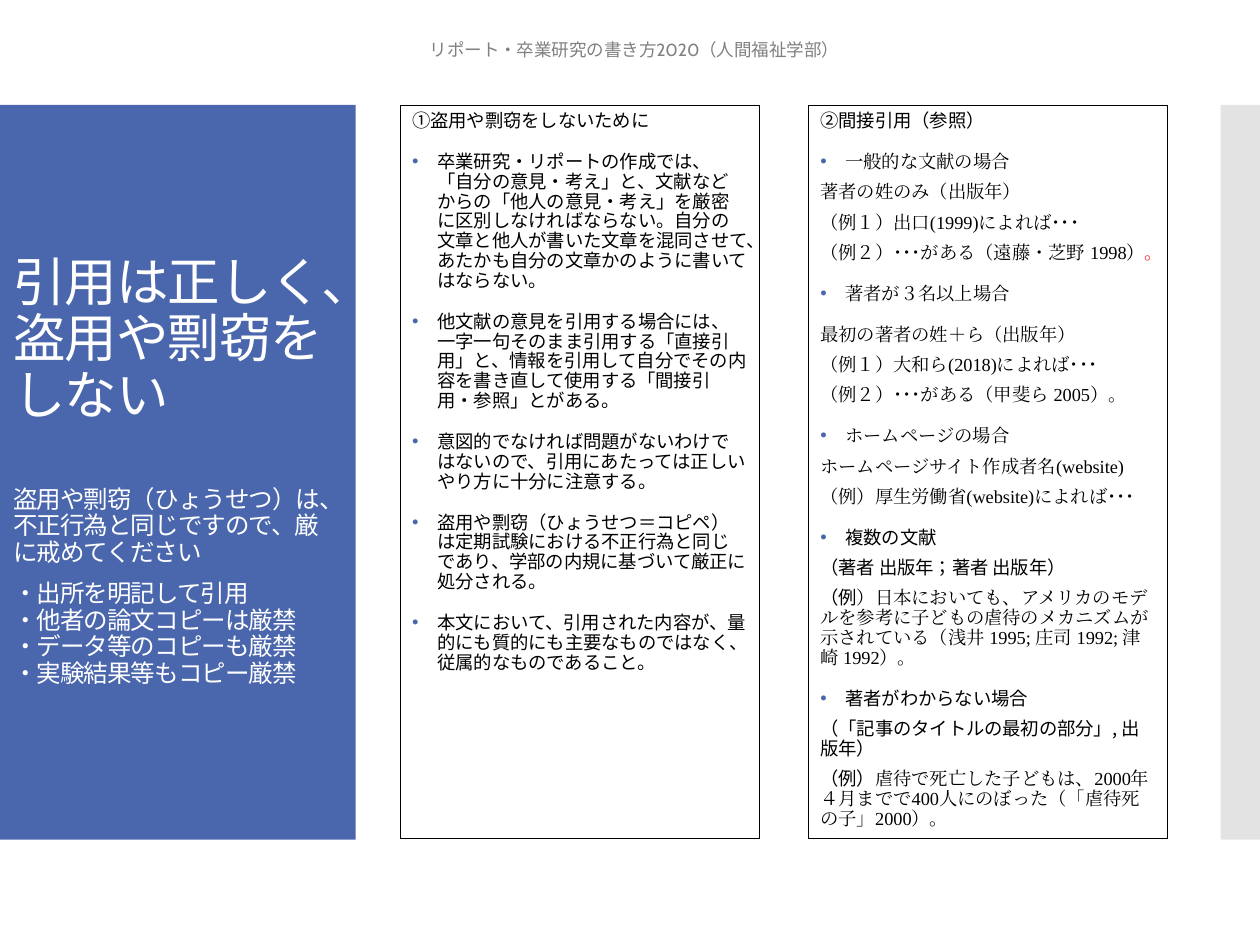
from dataclasses import dataclass

from lxml import etree
from pptx import Presentation
from pptx.dml.color import RGBColor
from pptx.enum import shapes, text
from pptx.oxml import ns
from pptx.util import Pt

BLUE = RGBColor(0x4A, 0x66, 0xAC)
GREY = RGBColor(0xC8, 0xC8, 0xC8)
HEADER_GREY = RGBColor(0x80, 0x80, 0x80)
BLACK = RGBColor(0, 0, 0)
WHITE = RGBColor(0xFF, 0xFF, 0xFF)
RED = RGBColor(0xFF, 0, 0)

CABIN, NOTO, TIMES = "Cabin", "Noto Sans CJK JP", "Times New Roman"

BAND_TOP, BAND_H = 60, 419.8
PANEL_TOP, PANEL_W, PANEL_H = 60.3, 205.5, 419
PANEL_LEFTS = (228.5, 461.7)
BULLET_INDENT = 14.4


@dataclass
class Run:
    text: str
    font: str = TIMES
    color: RGBColor = BLACK
    size: float = 10.5
    spacing: float = 0


@dataclass
class Para:
    runs: list[Run]
    before: float = 6
    hang: float = 0
    bullet: bool = False
    line: float = 0.9
    align: text.PP_ALIGN = text.PP_ALIGN.LEFT


def bullet(txt: str, font: str = TIMES, before: float = 12) -> Para:
    return Para([Run(txt, font)], before, BULLET_INDENT, True)


def plain(txt: str, font: str = TIMES, before: float = 6, hang: float = 0) -> Para:
    return Para([Run(txt, font)], before, hang)


def side(txt: str, size: float, before: float = 0) -> Para:
    return Para([Run(txt, CABIN, WHITE, size, -0.6)], before)


def add_run(p, run: Run) -> None:
    r = p.add_run()
    r.text = run.text
    f = r.font
    f.name, f.size = run.font, Pt(run.size)
    f.color.rgb = run.color
    rPr = f._element
    rPr.set("lang", "ja-JP")
    if run.spacing:
        rPr.set("spc", str(round(run.spacing * 100)))
    latin = rPr.find(ns.qn("a:latin"))
    ea = etree.Element(ns.qn("a:ea"), typeface=run.font)
    latin.addnext(ea)


def write(tf, paras: list[Para], anchor: text.MSO_ANCHOR) -> None:
    tf.word_wrap = True
    tf.vertical_anchor = anchor
    for i, para in enumerate(paras):
        p = tf.add_paragraph() if i else tf.paragraphs[0]
        p.alignment = para.align
        p.line_spacing = para.line
        p.space_before = Pt(para.before)
        pPr = p._p.get_or_add_pPr()
        if para.hang:
            pPr.set("marL", str(Pt(para.hang)))
            pPr.set("indent", str(-Pt(para.hang)))
        if para.bullet:
            color = etree.SubElement(pPr, ns.qn("a:buClr"))
            etree.SubElement(color, ns.qn("a:srgbClr"), val=str(BLUE))
            etree.SubElement(pPr, ns.qn("a:buFont"), typeface="Arial")
            etree.SubElement(pPr, ns.qn("a:buChar"), char="•")
        for run in para.runs:
            add_run(p, run)


def add_rect(s, x: float, y: float, w: float, h: float):
    """Add a rectangle without shadow, fill or line."""
    sp = s.shapes.add_shape(shapes.MSO_SHAPE.RECTANGLE, Pt(x), Pt(y), Pt(w), Pt(h))
    sp.shadow.inherit = False
    sp.fill.background()
    sp.line.fill.background()
    return sp


def add_band(s, x: float, w: float, color: RGBColor, alpha: int = 100) -> None:
    sp = add_rect(s, x, BAND_TOP, w, BAND_H)
    sp.fill.solid()
    sp.fill.fore_color.rgb = color
    if alpha < 100:
        clr = sp._element.spPr.find(ns.qn("a:solidFill")).find(ns.qn("a:srgbClr"))
        etree.SubElement(clr, ns.qn("a:alpha"), val=str(alpha * 1000))


def add_panel(s, x: float, paras: list[Para]) -> None:
    sp = add_rect(s, x, PANEL_TOP, PANEL_W, PANEL_H)
    sp.line.color.rgb = BLACK
    sp.line.width = Pt(0.25)
    write(sp.text_frame, paras, text.MSO_ANCHOR.TOP)


def add_text(s, x: float, y: float, w: float, h: float, paras: list[Para]) -> None:
    tb = s.shapes.add_textbox(Pt(x), Pt(y), Pt(w), Pt(h))
    write(tb.text_frame, paras, text.MSO_ANCHOR.MIDDLE)


MESSAGE = [
    side("引用は正しく、盗用や剽窃をしない", 30),
    side("盗用や剽窃（ひょうせつ）は、不正行為と同じですので、厳に戒めてください", 14, 35),
    side("・出所を明記して引用", 14, 8.5),
    side("・他者の論文コピーは厳禁", 14),
    side("・データ等のコピーも厳禁", 14),
    side("・実験結果等もコピー厳禁", 14),
]

PLAGIARISM = [plain("①盗用や剽窃をしないために", NOTO, 12)] + [
    bullet(txt, NOTO) for txt in (
        "卒業研究・リポートの作成では、「自分の意見・考え」と、文献などからの「他人の意見・考え」を"
        "厳密に区別しなければならない。自分の文章と他人が書いた文章を混同させて、"
        "あたかも自分の文章かのように書いてはならない。",
        "他文献の意見を引用する場合には、一字一句そのまま引用する「直接引用」と、"
        "情報を引用して自分でその内容を書き直して使用する「間接引用・参照」とがある。",
        "意図的でなければ問題がないわけではないので、引用にあたっては正しいやり方に十分に注意する。",
        "盗用や剽窃（ひょうせつ＝コピペ）は定期試験における不正行為と同じであり、"
        "学部の内規に基づいて厳正に処分される。",
        "本文において、引用された内容が、量的にも質的にも主要なものではなく、従属的なものであること。",
    )
]

INDIRECT = [
    plain("②間接引用（参照）", NOTO, 12),
    bullet("一般的な文献の場合"),
    plain("著者の姓のみ（出版年）"),
    plain("（例１）出口(1999)によれば･･･"),
    Para([Run("（例２）･･･がある（遠藤・芝野 1998）"), Run("。", color=RED)], hang=42.5),
    bullet("著者が３名以上場合"),
    plain("最初の著者の姓＋ら（出版年）", before=12),
    plain("（例１）大和ら(2018)によれば･･･"),
    plain("（例２）･･･がある（甲斐ら 2005）。", hang=42.5),
    bullet("ホームページの場合"),
    plain("ホームページサイト作成者名(website)"),
    plain("（例）厚生労働省(website)によれば･･･", hang=28),
    bullet("複数の文献", NOTO),
    plain("（著者 出版年；著者 出版年）", NOTO),
    Para([Run("（例", NOTO),
          Run("）日本においても、アメリカのモデルを参考に子どもの虐待のメカニズムが示されている"
              "（浅井 1995; 庄司 1992; 津崎 1992）。")]),
    bullet("著者がわからない場合", NOTO),
    plain("（「記事のタイトルの最初の部分」, 出版年）", NOTO),
    Para([Run("（例）", NOTO),
          Run("虐待で死亡した子どもは、2000年４月までで400人にのぼった（「虐待死の子」2000）。")]),
]

HEADER = [Para([Run("リポート・卒業研究の書き方2020（人間福祉学部）", CABIN, HEADER_GREY, 10)],
               before=0, line=1.0, align=text.PP_ALIGN.CENTER)]


def main() -> None:
    prs = Presentation()
    prs.slide_width, prs.slide_height = Pt(720), Pt(540)
    s = prs.slides.add_slide(prs.slide_layouts[6])
    add_band(s, 0, 203.3, BLUE)
    add_band(s, 697.5, 22.5, GREY, alpha=50)
    add_text(s, 0.5, 88.5, 191.5, 362, MESSAGE)
    for x, paras in zip(PANEL_LEFTS, (PLAGIARISM, INDIRECT)):
        add_panel(s, x, paras)
    add_text(s, 188, 13.5, 349, 29, HEADER)
    prs.save("out.pptx")


if __name__ == "__main__":
    main()
